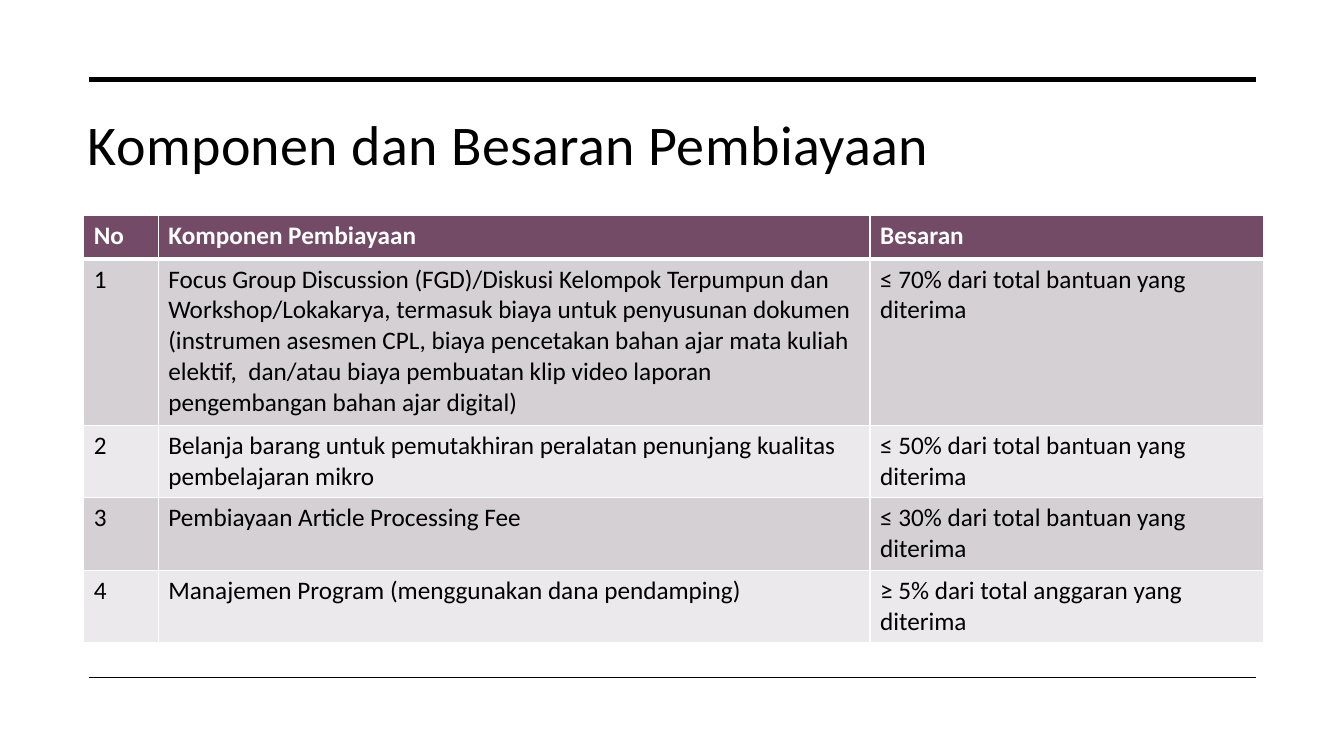
from dataclasses import dataclass

from lxml import etree
from pptx import Presentation
from pptx import util as u
from pptx.dml import color
from pptx.enum import shapes, text
from pptx.oxml import ns

COLOURS = {
    "ink": "000000",
    "paper": "FFFFFF",
    "header": "734B67",
    "odd": "D5D0D3",
    "even": "EBE9EB",
}
FONT = "Calibri"
WIDTH, HEIGHT = u.Inches(13.33), u.Inches(7.5)


@dataclass(frozen=True)
class Rule:
    y: float  # percent of the slide height
    weight: float  # points


@dataclass(frozen=True)
class Component:
    number: str
    description: str
    amount: str
    height: float = 9.6  # percent of the slide height


RULES = [Rule(10.53, 3.5), Rule(89.6, 1)]
RULE_LEFT, RULE_RIGHT = 6.6, 93.47
COLUMN_SHARES = [5.55, 52.96, 29.26]
COMPONENTS = [
    Component("No", "Komponen Pembiayaan", "Besaran", 5.73),
    Component(
        "1",
        "Focus Group Discussion (FGD)/Diskusi Kelompok Terpumpun dan "
        "Workshop/Lokakarya, termasuk biaya untuk penyusunan dokumen "
        "(instrumen asesmen CPL, biaya pencetakan bahan ajar mata kuliah "
        "elektif,  dan/atau biaya pembuatan klip video laporan "
        "pengembangan bahan ajar digital)",
        "≤ 70% dari total bantuan yang diterima",
        22,
    ),
    Component(
        "2",
        "Belanja barang untuk pemutakhiran peralatan penunjang kualitas "
        "pembelajaran mikro",
        "≤ 50% dari total bantuan yang diterima",
    ),
    Component("3", "Pembiayaan Article Processing Fee",
              "≤ 30% dari total bantuan yang diterima"),
    Component("4", "Manajemen Program (menggunakan dana pendamping)",
              "≥ 5% dari total anggaran yang diterima"),
]


def across(percent: float) -> int:
    return round(WIDTH * percent / 100)


def down(percent: float) -> int:
    return round(HEIGHT * percent / 100)


def rgb(name: str) -> color.RGBColor:
    return color.RGBColor.from_string(COLOURS[name])


def apply(target, formats: dict) -> None:
    for name, value in formats.items():
        setattr(target, name, value)


def style_font(font, size: float, ink: str, bold: bool = False) -> None:
    apply(font, {"name": FONT, "size": u.Pt(size), "bold": bold})
    font.color.rgb = rgb(ink)


def draw_rule(slide, rule: Rule) -> None:
    line = slide.shapes.add_connector(
        shapes.MSO_CONNECTOR.STRAIGHT,
        across(RULE_LEFT), down(rule.y), across(RULE_RIGHT), down(rule.y))
    line.line.width = u.Pt(rule.weight)
    line.line.color.rgb = rgb("ink")
    etree.SubElement(line._element.spPr, ns.qn("a:effectLst"))


def draw_title(slide, wording: str) -> None:
    heading = slide.shapes.title
    apply(heading, {"left": across(5.78), "top": down(13.33),
                    "width": across(87.7), "height": down(11.33)})
    frame = heading.text_frame
    apply(frame, {"text": wording, "word_wrap": True,
                  "auto_size": text.MSO_AUTO_SIZE.NONE,
                  "vertical_anchor": text.MSO_ANCHOR.MIDDLE})
    paragraph = frame.paragraphs[0]
    paragraph.alignment = text.PP_ALIGN.LEFT
    run = paragraph.runs[0]
    style_font(run.font, 40, "ink")
    run.font._element.set("spc", "30")


def add_borders(cell, weights: dict[str, float]) -> None:
    properties = cell._tc.get_or_add_tcPr()
    for side, weight in weights.items():
        edge = etree.SubElement(properties, ns.qn(f"a:ln{side}"),
                                w=str(u.Pt(weight)))
        fill = etree.SubElement(edge, ns.qn("a:solidFill"))
        etree.SubElement(fill, ns.qn("a:srgbClr"), val=COLOURS["paper"])


def draw_costs(slide, components: list[Component]) -> None:
    costs = slide.shapes.add_table(
        len(components), len(COLUMN_SHARES), across(6.23), down(28.53),
        across(sum(COLUMN_SHARES)),
        down(sum(component.height for component in components))).table
    for column, share in zip(costs.columns, COLUMN_SHARES):
        column.width = across(share)

    for index, (row, component) in enumerate(zip(costs.rows, components)):
        row.height = down(component.height)
        header = index == 0
        band = "header" if header else "odd" if index % 2 else "even"
        weights = {"L": 1, "R": 1, "T": 3 if index == 1 else 1,
                   "B": 3 if header else 1}
        wordings = (component.number, component.description, component.amount)
        for cell, wording in zip(row.cells, wordings):
            cell.text = wording
            style_font(cell.text_frame.paragraphs[0].runs[0].font, 18,
                       "paper" if header else "ink", header)
            add_borders(cell, weights)
            cell.fill.solid()
            cell.fill.fore_color.rgb = rgb(band)


def main() -> None:
    deck = Presentation()
    apply(deck, {"slide_width": WIDTH, "slide_height": HEIGHT})
    slide = deck.slides.add_slide(deck.slide_layouts.get_by_name("Title Only"))

    # Rules above and below the content
    for rule in RULES:
        draw_rule(slide, rule)

    # Heading and funding table
    draw_title(slide, "Komponen dan Besaran Pembiayaan")
    draw_costs(slide, COMPONENTS)
    deck.save("out.pptx")


if __name__ == "__main__":
    main()
